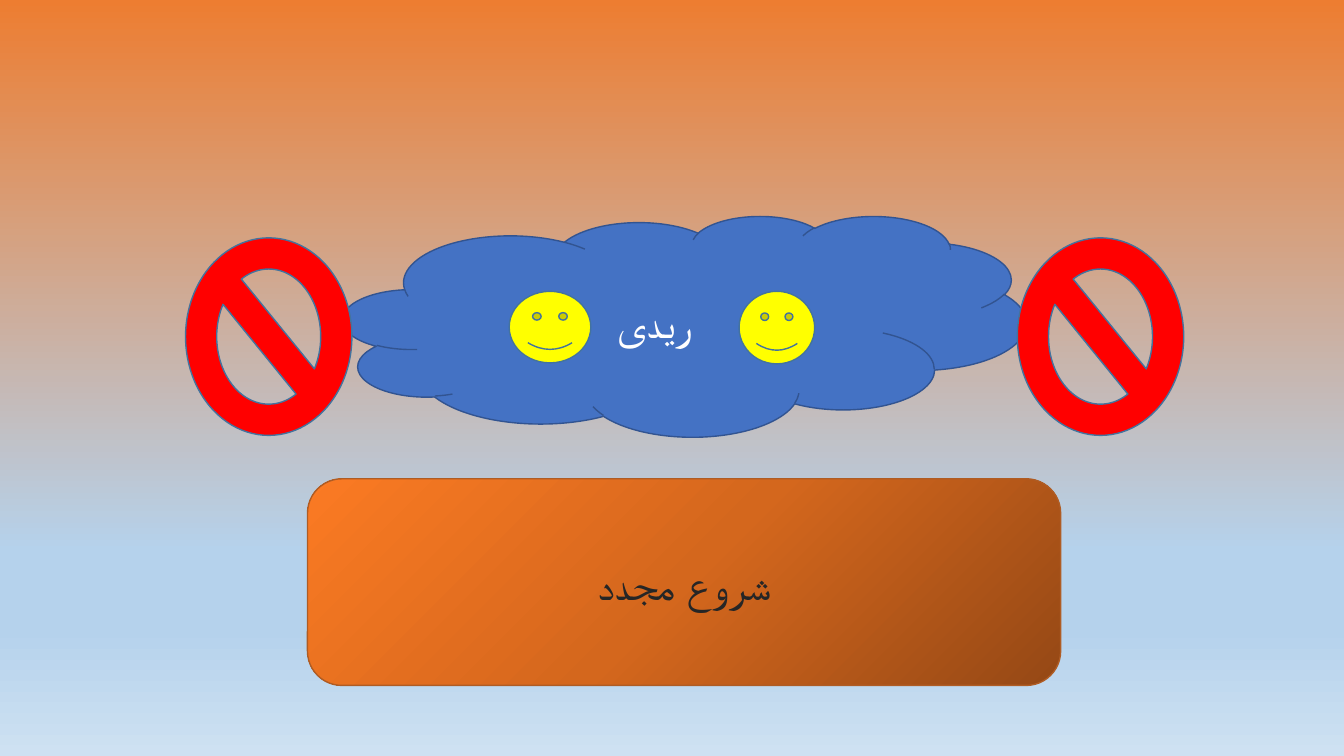
from lxml import etree
from pptx import Presentation
from pptx.dml.color import RGBColor
from pptx.enum import shapes, text
from pptx.oxml.ns import qn
from pptx.util import Inches, Pt

BLUE = RGBColor(0x44, 0x72, 0xC4)
CLOUD_EDGE = RGBColor(0x32, 0x54, 0x91)
SIGN_EDGE = RGBColor(0x43, 0x73, 0x9E)
BUTTON_EDGE = RGBColor(0xAF, 0x5C, 0x24)
RED = RGBColor(0xFF, 0x00, 0x00)
YELLOW = RGBColor(0xFF, 0xFF, 0x00)
WHITE = RGBColor(0xFF, 0xFF, 0xFF)
DARK = RGBColor(0x26, 0x26, 0x26)
ORANGE = RGBColor(0xED, 0x7D, 0x31)
SKY = RGBColor(0xB5, 0xD2, 0xEC)
PALE_SKY = RGBColor(0xCE, 0xE1, 0xF2)
BROWN = RGBColor(0x95, 0x48, 0x15)
RUST = RGBColor(0xD4, 0x67, 0x1D)
BRIGHT_ORANGE = RGBColor(0xFB, 0x7A, 0x23)


def set_gradient(fill, owner, stops, angle):
    """Fill with (percent, colour) stops; angle is in degrees clockwise."""
    fill.gradient()
    gradient = next(owner.iter(qn("a:gradFill")))
    stop_list = gradient.find(qn("a:gsLst"))
    stop_list.clear()
    for percent, colour in stops:
        stop = etree.SubElement(stop_list, qn("a:gs"), pos=str(percent * 1000))
        etree.SubElement(stop, qn("a:srgbClr"), val=str(colour))
    direction = gradient.find(qn("a:lin"))
    direction.set("ang", str(angle * 60000))
    direction.set("scaled", "0")


def add_figure(parent, kind, bounds, colour, edge, words="", ink=WHITE):
    figure = parent.add_shape(kind, *map(Inches, bounds))
    figure.shadow.inherit = False
    if colour is not None:
        figure.fill.solid()
        figure.fill.fore_color.rgb = colour
    figure.line.color.rgb = edge
    figure.line.width = Pt(1)
    if words:
        frame = figure.text_frame
        frame.word_wrap = True
        frame.vertical_anchor = text.MSO_ANCHOR.MIDDLE
        para = frame.paragraphs[0]
        para.text = words
        para.alignment = text.PP_ALIGN.CENTER
        para.font.name = "Calibri"
        para.font.size = Pt(32)
        para.font.color.rgb = ink
    return figure


deck = Presentation()
deck.slide_width, deck.slide_height = Inches(13.33), Inches(7.5)
page = deck.slides.add_slide(deck.slide_layouts[6])
set_gradient(page.background.fill, page.element,
             [(0, ORANGE), (73, SKY), (83, SKY), (100, PALE_SKY)], 90)

kinds = shapes.MSO_SHAPE
banner = page.shapes.add_group_shape().shapes
add_figure(banner, kinds.CLOUD, (3.4, 2.14, 6.78, 2.19), BLUE, CLOUD_EDGE, "ریدی ")
for left in (10.09, 1.84):
    add_figure(banner, kinds.NO_SYMBOL, (left, 2.36, 1.65, 1.96), RED, SIGN_EDGE)
for left, width, height in ((5.05, 0.81, 0.71), (7.33, 0.75, 0.72)):
    add_figure(banner, kinds.SMILEY_FACE, (left, 2.89, width, height), YELLOW, SIGN_EDGE)

button = add_figure(page.shapes, kinds.ROUNDED_RECTANGLE, (3.05, 4.75, 7.47, 2.05),
                    None, BUTTON_EDGE, "شروع مجدد", DARK)
set_gradient(button.fill, button.element,
             [(0, BROWN), (50, RUST), (100, BRIGHT_ORANGE)], 225)

deck.save("out.pptx")
